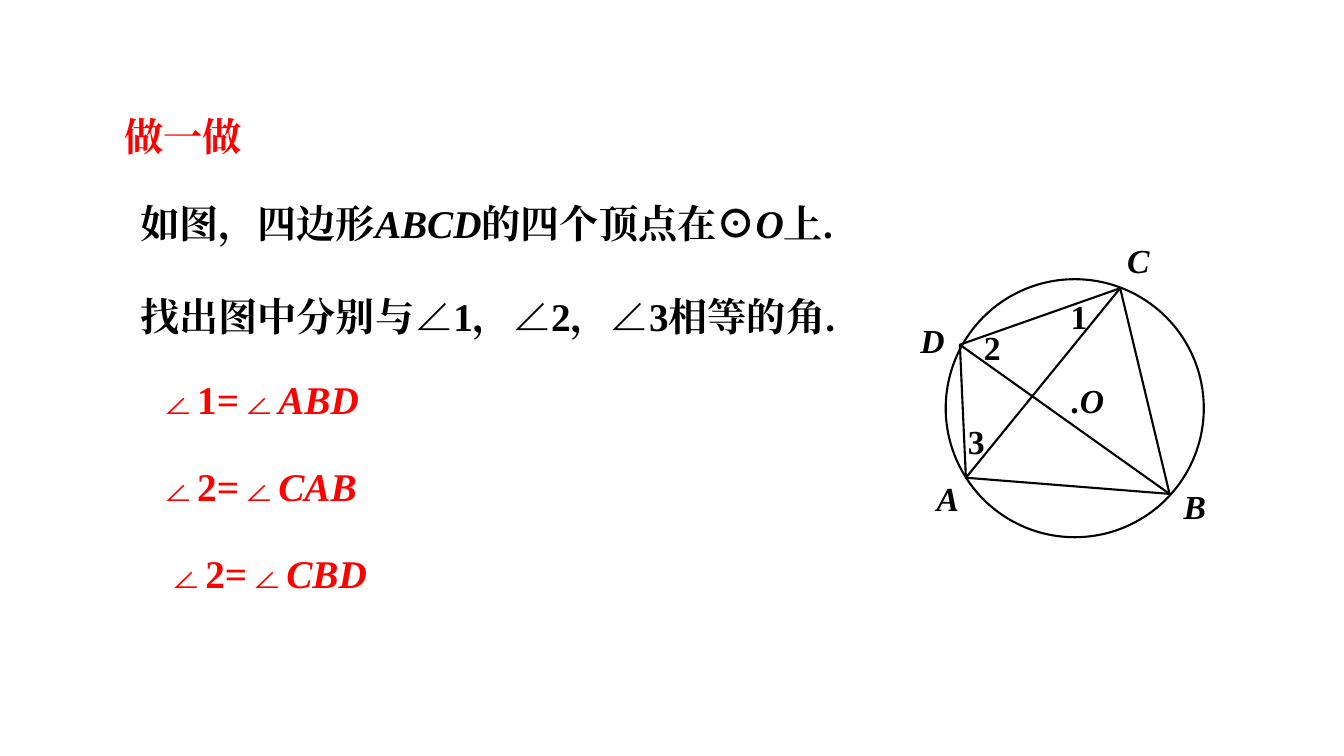
from lxml import etree
from pptx import Presentation
from pptx.dml.color import RGBColor
from pptx.enum import shapes, text
from pptx.oxml.ns import qn
from pptx.util import Inches, Pt

COLORS = {"ink": "000000", "accent": "FF0000"}
SERIF, CJK = "Times New Roman", "Noto Sans CJK SC"

VERTICES = {"A": (9.58, 4.74), "B": (11.6, 4.9), "C": (11.11, 2.86), "D": (9.52, 3.42)}
LABELS = [
    ("C", 11.08, 2.33), ("B", 11.64, 4.77), ("A", 9.19, 4.69), ("D", 9.03, 3.12),
    (".O", 10.53, 3.72), ("1", 10.52, 2.89), ("2", 9.66, 3.19), ("3", 9.5, 4.13),
]
# Each run is (text, italic, font).
PROBLEM = [
    [("如图，四边形", False, SERIF), ("ABCD", True, SERIF), ("的四个顶点在", False, SERIF),
     ("⊙", False, CJK), ("O", True, SERIF), ("上.", False, SERIF)],
    [("找出图中分别与∠1，∠2，∠3相等的角.", False, SERIF)],
]
ANSWERS = [("∠1=∠", "ABD", 1.47, 3.67), ("∠2=∠", "CAB", 1.47, 4.54), ("∠2=∠", "CBD", 1.55, 5.4)]


def rgb(name):
    return RGBColor.from_string(COLORS[name])


def place(shape, left, top, width, height):
    shape.left, shape.top = Inches(left), Inches(top)
    shape.width, shape.height = Inches(width), Inches(height)


def set_frame(frame, inset_x=0.1, inset_y=0.05):
    frame.word_wrap = True
    frame.auto_size = text.MSO_AUTO_SIZE.NONE
    frame.vertical_anchor = text.MSO_ANCHOR.TOP
    frame.margin_left = frame.margin_right = Inches(inset_x)
    frame.margin_top = frame.margin_bottom = Inches(inset_y)


def add_run(paragraph, words, size, color="ink", italic=False, font=SERIF, east_asian=False):
    run = paragraph.add_run()
    run.text = words
    run.font.name, run.font.size = font, Pt(size)
    run.font.bold, run.font.italic = True, italic
    run.font.color.rgb = rgb(color)
    if east_asian:
        run.font._element.find(qn("a:latin")).addnext(
            etree.Element(qn("a:ea"), typeface=font))


def add_text(slide, left, top, width, height):
    """Add an empty text box and return its first paragraph."""
    box = slide.shapes.add_textbox(Inches(left), Inches(top), Inches(width), Inches(height))
    set_frame(box.text_frame)
    return box.text_frame.paragraphs[0]


def fill_title(title):
    place(title, 1.15, 1.07, 4.35, 0.55)
    set_frame(title.text_frame, 0.08, 0.04)
    heading = title.text_frame.paragraphs[0]
    heading.alignment = text.PP_ALIGN.LEFT
    add_run(heading, "做一做", 28, "accent", east_asian=True)


def fill_problem(body):
    place(body, 1.31, 1.7, 11.1, 1.64)
    frame = body.text_frame
    set_frame(frame, 0.08, 0.04)
    for index, runs in enumerate(PROBLEM):
        sentence = frame.add_paragraph() if index else frame.paragraphs[0]
        sentence.line_spacing, sentence.space_before = 1.5, Pt(16)
        properties = sentence._p.get_or_add_pPr()
        properties.set("marL", "0")
        properties.set("indent", "0")
        etree.SubElement(properties, qn("a:buNone"))
        for words, italic, font in runs:
            add_run(sentence, words, 28, italic=italic, font=font, east_asian=True)


def style_outline(shape):
    shape.shadow.inherit = False
    shape.fill.background()
    shape.line.color.rgb = rgb("ink")
    shape.line.width = Pt(1.5)


def add_diagonal(slide, start, end):
    ends = [Inches(value) for value in VERTICES[start] + VERTICES[end]]
    diagonal = slide.shapes.add_connector(shapes.MSO_CONNECTOR.STRAIGHT, *ends)
    diagonal.line.color.rgb = rgb("ink")
    diagonal.line.width = Pt(1.5)
    etree.SubElement(diagonal._element.spPr, qn("a:effectLst"))


def add_figure(slide):
    """Draw the circle, the inscribed quadrilateral, its diagonals and the labels."""
    circle = slide.shapes.add_shape(
        shapes.MSO_SHAPE.OVAL, Inches(9.38), Inches(2.77), Inches(2.56), Inches(2.56))
    style_outline(circle)
    corners = [(Inches(x), Inches(y)) for x, y in (VERTICES[name] for name in "DABC")]
    outline = slide.shapes.build_freeform(*corners[0])
    outline.add_line_segments(corners[1:], close=True)
    style_outline(outline.convert_to_shape())
    for start, end in ("AC", "DB"):
        add_diagonal(slide, start, end)
    for label, left, top in LABELS:
        add_run(add_text(slide, left, top, 0.78, 0.5), label, 24, italic=not label.isdigit())


def add_answer(slide, angle, name, left, top):
    answer = add_text(slide, left, top, 6.67, 0.57)
    add_run(answer, angle, 28, "accent")
    add_run(answer, name, 28, "accent", italic=True)


def main():
    deck = Presentation()
    deck.slide_width, deck.slide_height = Inches(13.33), Inches(7.5)
    slide = deck.slides.add_slide(deck.slide_layouts[1])
    fill_title(slide.shapes.title)
    fill_problem(slide.placeholders[1])
    add_figure(slide)
    for answer in ANSWERS:
        add_answer(slide, *answer)
    deck.save("out.pptx")


if __name__ == "__main__":
    main()
